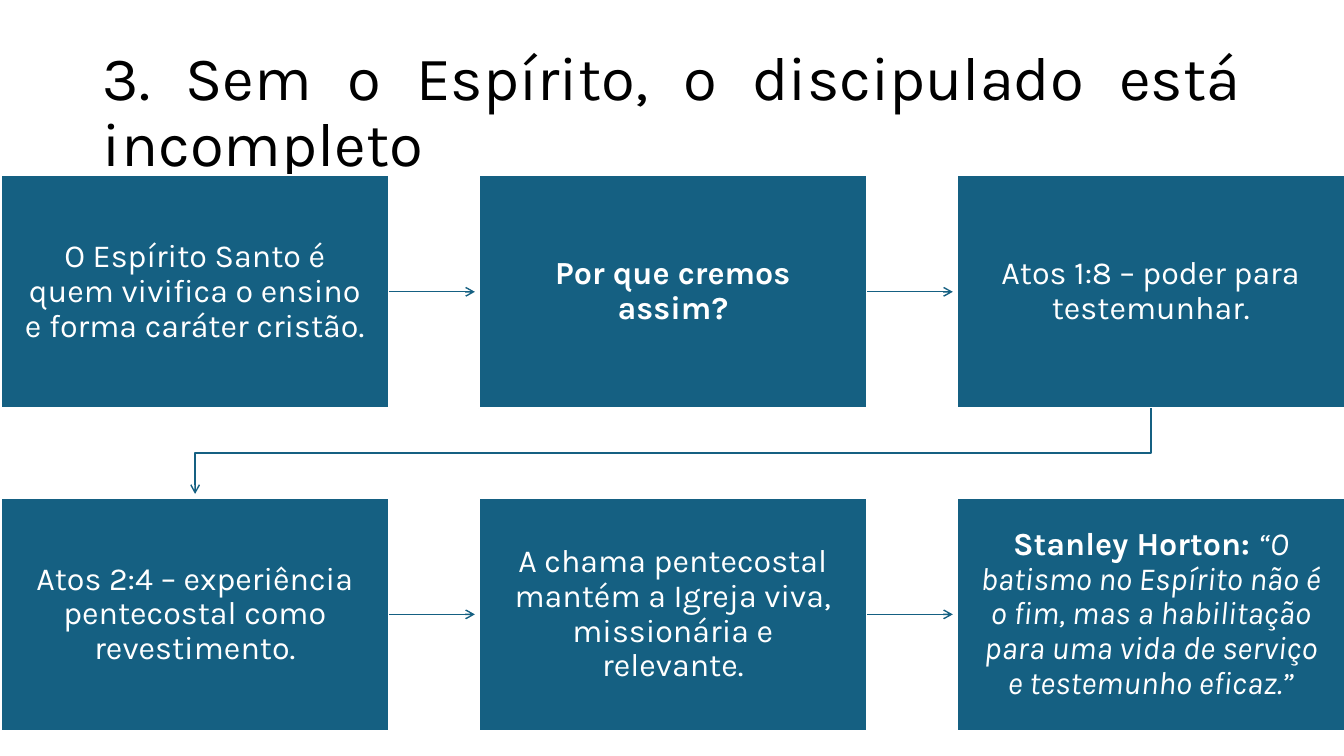
from dataclasses import dataclass

from lxml.etree import SubElement
from pptx import Presentation
from pptx.dml.color import RGBColor
from pptx.enum.shapes import MSO_CONNECTOR as Connector, MSO_SHAPE as Shape
from pptx.enum.text import MSO_ANCHOR as Anchor, MSO_AUTO_SIZE as AutoSize, PP_ALIGN as Align
from pptx.oxml.ns import qn
from pptx.util import Inches, Pt

COLOURS = {"box": "156082", "white": "FFFFFF", "title": "000000"}
FONT = "Karla"
COLUMNS = 3
LEFT, TOP = 0.01, 1.74
BOX_WIDTH, BOX_HEIGHT = 3.85, 2.31
COLUMN_STEP, ROW_STEP = 4.74, 3.2
ARROW_GAP = 0.04
TITLE = "3. Sem o Espírito, o discipulado está incompleto"


@dataclass(frozen=True)
class Span:
    text: str
    bold: bool = False
    italic: bool = False


@dataclass(frozen=True)
class Step:
    spans: tuple[Span, ...]


STEPS = (
    Step((Span("O Espírito Santo é quem vivifica o ensino e forma caráter cristão."),)),
    Step((Span("Por que cremos assim?", bold=True),)),
    Step((Span("Atos 1:8 – poder para testemunhar."),)),
    Step((Span("Atos 2:4 – experiência pentecostal como revestimento."),)),
    Step((Span("A chama pentecostal mantém a Igreja viva, missionária e relevante."),)),
    Step((
        Span("Stanley Horton: ", bold=True),
        Span("“O batismo no Espírito não é o fim, mas a habilitação para uma vida "
             "de serviço e testemunho eficaz.”", italic=True),
    )),
)


def colour(name: str) -> RGBColor:
    return RGBColor.from_string(COLOURS[name])


def format_run(run, size: float, colour_name: str) -> None:
    run.font.name = FONT
    run.font.size = Pt(size)
    run.font.color.rgb = colour(colour_name)


def add_title(slide) -> None:
    title = slide.shapes.title
    title.left, title.top = Inches(0.92), Inches(0.4)
    title.width, title.height = Inches(11.5), Inches(1.45)
    text_frame = title.text_frame
    text_frame.text = TITLE
    text_frame.word_wrap = True
    text_frame.auto_size = AutoSize.NONE
    text_frame.vertical_anchor = Anchor.MIDDLE
    paragraph = text_frame.paragraphs[0]
    paragraph.alignment = Align.JUSTIFY
    paragraph.line_spacing = 0.9
    format_run(paragraph.runs[0], 44, "title")


def box_origin(index: int) -> tuple[float, float]:
    row, column = divmod(index, COLUMNS)
    return LEFT + column * COLUMN_STEP, TOP + row * ROW_STEP


def add_box(slide, index: int, step: Step) -> None:
    left, top = box_origin(index)
    box = slide.shapes.add_shape(
        Shape.RECTANGLE, Inches(left), Inches(top), Inches(BOX_WIDTH), Inches(BOX_HEIGHT))
    box.shadow.inherit = False
    box.fill.solid()
    box.fill.fore_color.rgb = colour("box")
    box.line.color.rgb = colour("white")
    box.line.width = Pt(1.5)
    text_frame = box.text_frame
    text_frame.word_wrap = True
    text_frame.vertical_anchor = Anchor.MIDDLE
    text_frame.margin_left = text_frame.margin_right = Inches(0.19)
    text_frame.margin_top = text_frame.margin_bottom = Inches(0.2)
    paragraph = text_frame.paragraphs[0]
    paragraph.alignment = Align.CENTER
    paragraph.line_spacing = 0.9
    for span in step.spans:
        run = paragraph.add_run()
        run.text = span.text
        format_run(run, 23, "white")
        run.font.bold = span.bold
        run.font.italic = span.italic


def format_arrow(line) -> None:
    line.color.rgb = colour("box")
    line.width = Pt(1)
    SubElement(line._get_or_add_ln(), qn("a:tailEnd"), type="arrow")


def add_straight_arrow(slide, index: int) -> None:
    left, top = box_origin(index)
    start = left + BOX_WIDTH
    end = left + COLUMN_STEP - ARROW_GAP
    middle = Inches(top + BOX_HEIGHT / 2)
    arrow = slide.shapes.add_connector(
        Connector.STRAIGHT, Inches(start), middle, Inches(end), middle)
    format_arrow(arrow.line)
    SubElement(arrow._element.spPr, qn("a:effectLst"))


def add_return_arrow(slide, index: int) -> None:
    left, top = box_origin(index)
    next_left, next_top = box_origin(index + 1)
    start_x, end_x = left + BOX_WIDTH / 2, next_left + BOX_WIDTH / 2
    start_y, end_y = top + BOX_HEIGHT, next_top - ARROW_GAP
    turn_y = (start_y + next_top) / 2
    points = [(start_x, turn_y), (end_x, turn_y), (end_x, end_y)]
    builder = slide.shapes.build_freeform(Inches(start_x), Inches(start_y))
    builder.add_line_segments([(Inches(x), Inches(y)) for x, y in points], close=False)
    arrow = builder.convert_to_shape()
    arrow.shadow.inherit = False
    arrow.fill.background()
    format_arrow(arrow.line)


def main() -> None:
    presentation = Presentation()
    presentation.slide_width = Inches(13.33)
    presentation.slide_height = Inches(7.5)
    slide = presentation.slides.add_slide(presentation.slide_layouts[5])
    add_title(slide)
    for index, step in enumerate(STEPS):
        add_box(slide, index, step)
        if (index + 1) % COLUMNS:
            add_straight_arrow(slide, index)
        elif index + 1 < len(STEPS):
            add_return_arrow(slide, index)
    presentation.save("out.pptx")


if __name__ == "__main__":
    main()
